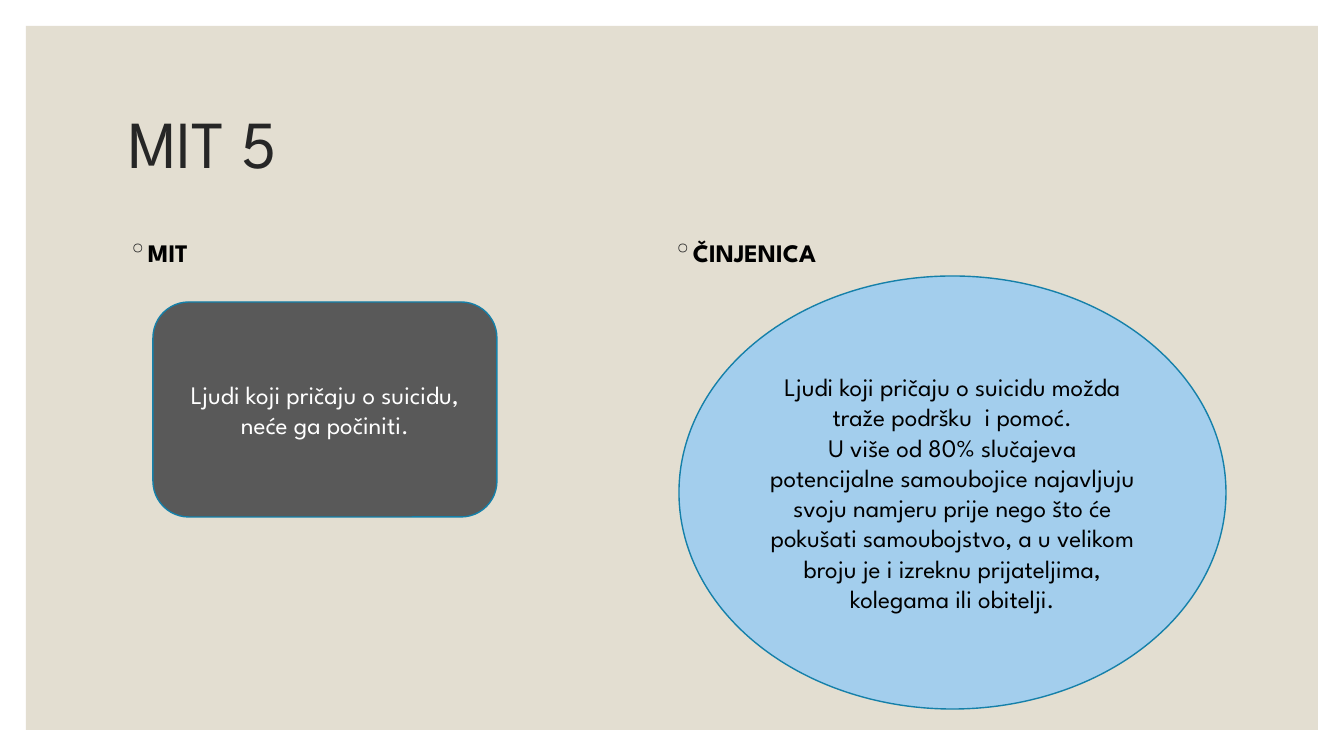
from lxml import etree
from pptx import Presentation
from pptx.dml.color import RGBColor
from pptx.enum.shapes import MSO_SHAPE
from pptx.enum.text import MSO_ANCHOR, PP_ALIGN
from pptx.oxml.ns import qn
from pptx.util import Pt

PX = 12192000 / 1344
FONT = "League Spartan"
TITLE_ONLY = 5
RECT, ROUNDED, OVAL = MSO_SHAPE.RECTANGLE, MSO_SHAPE.ROUNDED_RECTANGLE, MSO_SHAPE.OVAL
LEFT, CENTER = PP_ALIGN.LEFT, PP_ALIGN.CENTER
TOP, MIDDLE = MSO_ANCHOR.TOP, MSO_ANCHOR.MIDDLE
COLORS = {
    "background": "FFFFFF",
    "panel": "E3DED1",
    "title": "262626",
    "heading": "000000",
    "myth": "595959",
    "myth_text": "FFFFFF",
    "fact": "A3CEED",
    "fact_text": "000000",
    "outline": "1580A9",
}
MYTH = "Ljudi koji pričaju o suicidu, neće ga počiniti."
FACT = (
    "Ljudi koji pričaju o suicidu možda traže podršku  i pomoć.\n"
    "U više od 80% slučajeva potencijalne samoubojice najavljuju svoju namjeru "
    "prije nego što će pokušati samoubojstvo, a u velikom broju je i izreknu "
    "prijateljima, kolegama ili obitelji."
)


def px(value):
    return round(value * PX)


def color(name):
    return RGBColor.from_string(COLORS[name])


def write(frame, text, size, color_name, align, anchor, bold=False):
    frame.text = text
    frame.word_wrap = True
    frame.vertical_anchor = anchor
    for paragraph in frame.paragraphs:
        paragraph.alignment = align
        for run in paragraph.runs:
            run.font.name = FONT
            run.font.size = Pt(size)
            run.font.bold = bold
            run.font.color.rgb = color(color_name)


def add_panel(slide, kind, box, fill, outline=None):
    panel = slide.shapes.add_shape(kind, *map(px, box))
    panel.shadow.inherit = False
    panel.fill.solid()
    panel.fill.fore_color.rgb = color(fill)
    if outline:
        panel.line.color.rgb = color(outline)
        panel.line.width = Pt(1)
    else:
        panel.line.fill.background()
    return panel


def add_title(slide, text, box):
    title = slide.shapes.title
    title.left, title.top, title.width, title.height = map(px, box)
    write(title.text_frame, text, 48, "title", LEFT, MIDDLE)
    title.text_frame.paragraphs[0].line_spacing = 0.9
    return title


def add_heading(slide, text, box):
    heading = slide.shapes.add_textbox(*map(px, box))
    write(heading.text_frame, text, 18, "heading", LEFT, TOP, bold=True)
    properties = heading.text_frame.paragraphs[0]._p.get_or_add_pPr()
    properties.set("marL", str(px(20)))
    properties.set("indent", str(px(-20)))
    bullet_color = etree.SubElement(properties, qn("a:buClr"))
    etree.SubElement(bullet_color, qn("a:srgbClr"), val=COLORS["title"])
    etree.SubElement(properties, qn("a:buChar"), char="◦")


def add_statement(slide, kind, box, text, style):
    statement = add_panel(slide, kind, box, style, "outline")
    write(statement.text_frame, text, 18, f"{style}_text", CENTER, MIDDLE)


def main():
    deck = Presentation()
    deck.slide_width, deck.slide_height = px(1344), px(756)
    slide = deck.slides.add_slide(deck.slide_layouts[TITLE_ONLY])
    slide.background.fill.solid()
    slide.background.fill.fore_color.rgb = color("background")

    title = add_title(slide, "MIT 5", (118, 71, 1109, 151))
    backdrop = add_panel(slide, RECT, (26, 26, 1292, 704), "panel")
    title.element.addprevious(backdrop.element)

    for column, heading in enumerate(("MIT", "ČINJENICA")):
        add_heading(slide, heading, (118 + column * 545, 232, 545, 40))
    add_statement(slide, ROUNDED, (153, 302, 344, 215), MYTH, "myth")
    add_statement(slide, OVAL, (679, 276, 547, 433), FACT, "fact")
    deck.save("out.pptx")


if __name__ == "__main__":
    main()
